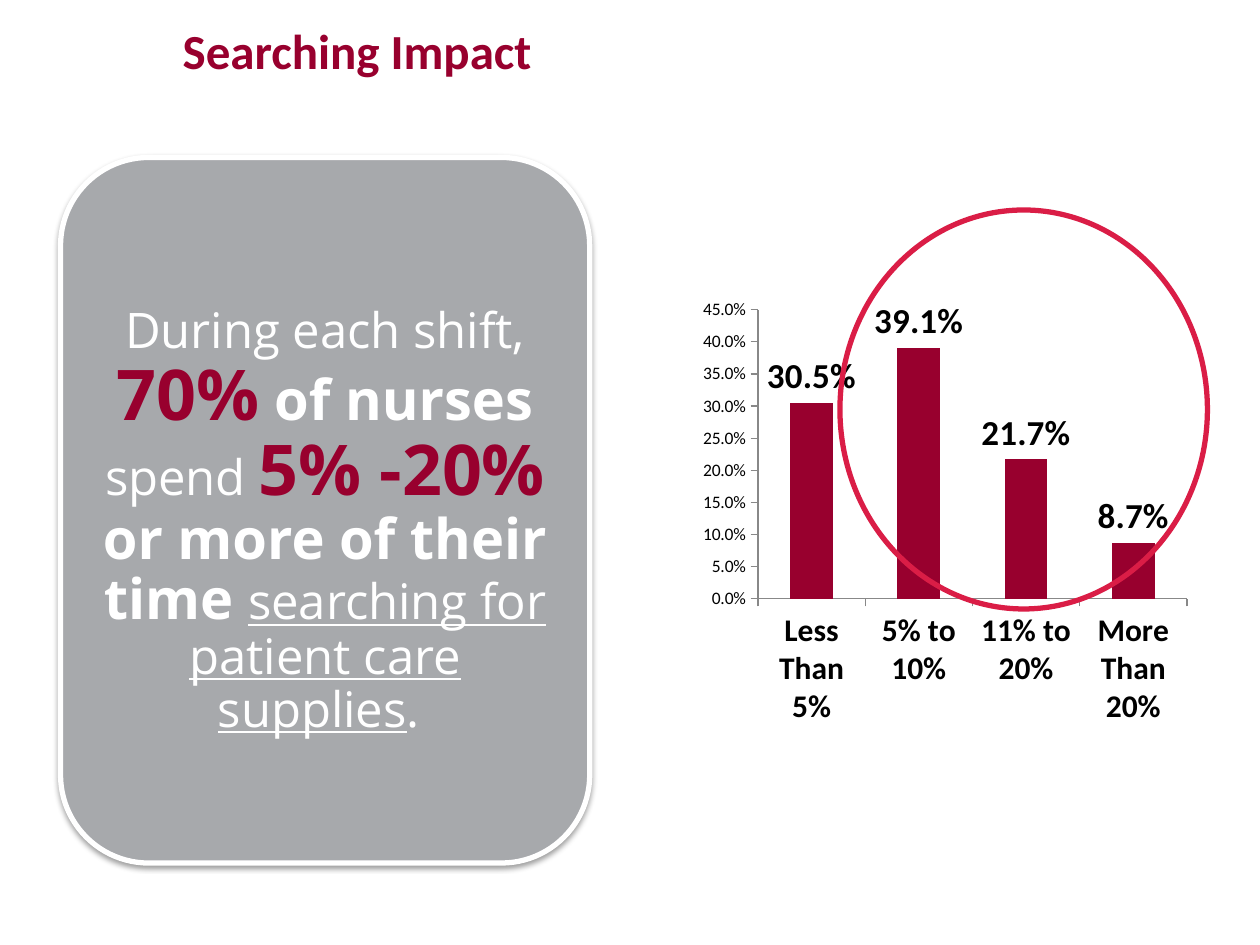
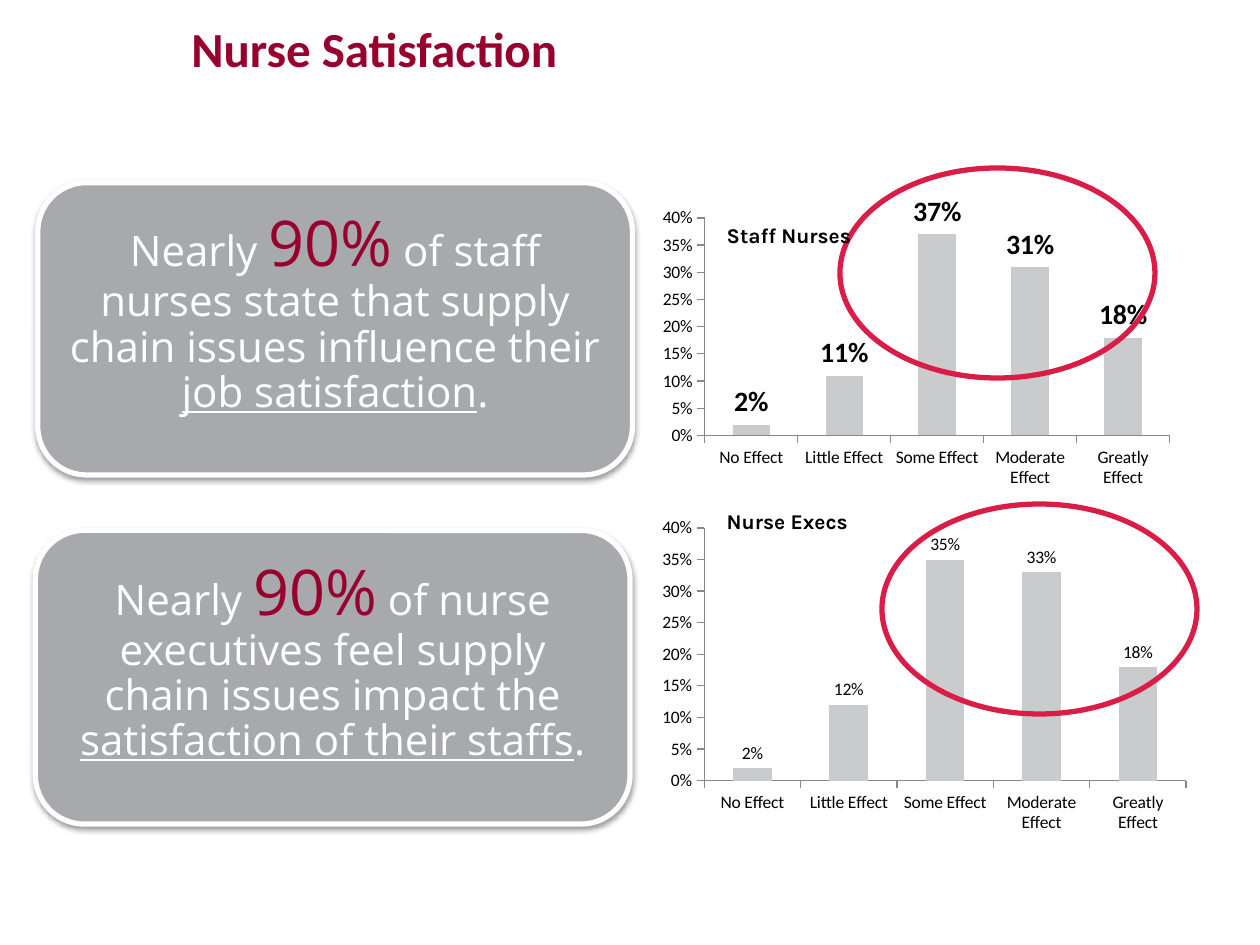
from lxml.etree import SubElement
from pptx import Presentation
from pptx.chart.data import CategoryChartData
from pptx.dml.color import RGBColor
from pptx.enum.chart import XL_CHART_TYPE, XL_LABEL_POSITION, XL_TICK_MARK
from pptx.enum.shapes import MSO_SHAPE
from pptx.enum.text import MSO_ANCHOR, MSO_AUTO_SIZE, PP_ALIGN
from pptx.oxml import parse_xml
from pptx.oxml.ns import nsdecls, qn
from pptx.util import Pt

COLORS = {
    "crimson": "98002E",
    "ring": "DA1D46",
    "card": "A7A9AC",
    "bar": "CACBCD",
    "axis": "888888",
    "white": "FFFFFF",
    "black": "000000",
}
HEADING_FONT, CARD_FONT, CAPTION_FONT = "Calibri", "Open Sans", "Karla"
EFFECTS = ["No Effect", "Little Effect", "Some Effect", "Moderate Effect", "Greatly Effect"]
SHADOW = (
    f'<a:outerShdw {nsdecls("a")} blurRad="{Pt(3.1)}" dist="{Pt(1.6)}" dir="5400000" '
    'rotWithShape="0"><a:srgbClr val="000000"><a:alpha val="38000"/></a:srgbClr></a:outerShdw>'
)

SLIDES = [
    {
        "title": ("Searching Impact", 97.2, 7.9),
        "charts": [
            {
                "frame": (396, 166.3, 288, 253.4),
                "categories": ["Less Than 5%", "5% to 10%", "11% to 20%", "More Than 20%"],
                "values": [0.305, 0.391, 0.217, 0.087],
                "format": "0.0%", "maximum": 0.45, "color": "crimson",
                "category_font": (18, True), "label_font": (20, True),
            },
        ],
        "rings": [(480, 120, 210, 228)],
        "captions": None,
        "cards": [
            {
                "frame": (34.6, 90, 302.4, 403.2),
                "bottom_inset": 8,
                "runs": [
                    ("During each shift, ", 28, "white", ""),
                    ("70%", 40, "crimson", "b"),
                    (" of nurses", 32, "white", "b"),
                    (" spend ", 28, "white", ""),
                    ("5% -20% ", 40, "crimson", "b"),
                    ("or more of their time ", 32, "white", "b"),
                    ("searching for patient care supplies", 28, "white", "u"),
                    (". ", 28, "white", ""),
                ],
            },
        ],
    },
    {
        "title": ("Nurse Satisfaction", 102.2, 7.2),
        "charts": [
            {
                "frame": (372.2, 104.4, 305.3, 182.9),
                "categories": EFFECTS,
                "values": [0.02, 0.11, 0.37, 0.31, 0.18],
                "format": "0%", "maximum": 0.4, "color": "bar",
                "category_font": (10, False), "label_font": (16, True),
                "plot": {"x": 0.1, "y": 0.11, "w": 0.87, "h": 0.68},
            },
            {
                "frame": (372.2, 292.3, 311.8, 187.2),
                "categories": EFFECTS,
                "values": [0.02, 0.12, 0.35, 0.33, 0.18],
                "format": "0%", "maximum": 0.4, "color": "bar",
                "category_font": (10, False), "label_font": (10, False),
            },
        ],
        "rings": [(504, 288, 180, 120), (480, 96, 180, 120)],
        "captions": ["Staff Nurses", "Nurse Execs"],
        "cards": [
            {
                "frame": (21.6, 104.4, 339.8, 167),
                "bottom_inset": 38,
                "runs": [
                    ("Nearly ", 24, "white", ""),
                    ("90%", 36, "crimson", ""),
                    (" of staff nurses state that supply chain issues influence their ",
                     24, "white", ""),
                    ("job satisfaction", 24, "white", "u"),
                    (".", 24, "white", ""),
                ],
            },
            {
                "frame": (20.2, 303.1, 339.8, 167.8),
                "bottom_inset": 38,
                "runs": [
                    ("Nearly ", 24, "white", ""),
                    ("90%", 36, "crimson", ""),
                    (" of nurse executives feel supply chain issues impact the ",
                     24, "white", ""),
                    ("satisfaction of their staffs", 24, "white", "u"),
                    (".", 24, "white", ""),
                ],
            },
        ],
    },
]


def rgb(name):
    return RGBColor.from_string(COLORS[name])


def points(frame):
    return [Pt(length) for length in frame]


def style_font(font, face, size, color, bold=False):
    font.name = face
    font.size = Pt(size)
    font.bold = bold
    font.color.rgb = rgb(color)


def add_title(page, text, left, top):
    title = page.shapes.title
    title.left, title.top, title.width, title.height = points((left, top, 468, 56.2))
    frame = title.text_frame
    frame.text = text
    frame.auto_size = MSO_AUTO_SIZE.NONE
    frame.vertical_anchor = MSO_ANCHOR.TOP
    para = frame.paragraphs[0]
    para.alignment = PP_ALIGN.LEFT
    style_font(para.runs[0].font, HEADING_FONT, 28, "crimson", True)


def set_plot_area(chart, plot):
    area = chart._chartSpace.chart.plotArea
    layout = area.find(qn("c:layout"))
    if layout is None:
        layout = area.makeelement(qn("c:layout"))
        area.insert(0, layout)
    manual = SubElement(layout, qn("c:manualLayout"))
    settings = {"layoutTarget": "inner", "xMode": "edge", "yMode": "edge", **plot}
    for tag, value in settings.items():
        SubElement(manual, qn(f"c:{tag}")).set("val", str(value))


def add_column_chart(page, item):
    data = CategoryChartData(number_format=item["format"])
    data.categories = item["categories"]
    data.add_series("Series 1", item["values"])
    chart = page.shapes.add_chart(
        XL_CHART_TYPE.COLUMN_CLUSTERED, *points(item["frame"]), data).chart
    chart.has_title = False
    chart.has_legend = False
    style_font(chart.font, HEADING_FONT, 10, "black")

    fonts = [item["category_font"], (10, False)]
    for axis, (size, bold) in zip((chart.category_axis, chart.value_axis), fonts):
        axis.has_major_gridlines = False
        axis.major_tick_mark = XL_TICK_MARK.OUTSIDE
        axis.minor_tick_mark = XL_TICK_MARK.NONE
        axis.format.line.color.rgb = rgb("axis")
        axis.format.line.width = Pt(0.75)
        style_font(axis.tick_labels.font, HEADING_FONT, size, "black", bold)
    values = chart.value_axis
    values.minimum_scale = 0
    values.maximum_scale = item["maximum"]
    values.major_unit = 0.05
    values.tick_labels.number_format = item["format"]
    values.tick_labels.number_format_is_linked = False

    plot = chart.plots[0]
    plot.gap_width = 150
    plot.vary_by_categories = False
    bars = plot.series[0]
    bars.format.fill.solid()
    bars.format.fill.fore_color.rgb = rgb(item["color"])
    labels = bars.data_labels
    labels.show_value = True
    labels.position = XL_LABEL_POSITION.OUTSIDE_END
    labels.number_format = item["format"]
    labels.number_format_is_linked = False
    size, bold = item["label_font"]
    style_font(labels.font, HEADING_FONT, size, "black", bold)
    if "plot" in item:
        set_plot_area(chart, item["plot"])


def add_outlined(page, kind, frame, line_color):
    shape = page.shapes.add_shape(kind, *points(frame))
    shape.line.color.rgb = rgb(line_color)
    shape.line.width = Pt(3)
    shape.shadow.inherit = False
    return shape


def add_ring(page, frame):
    add_outlined(page, MSO_SHAPE.OVAL, frame, "ring").fill.background()


def add_captions(page, captions):
    box = page.shapes.add_textbox(*points((408.2, 123.8, 144, 194.4)))
    frame = box.text_frame
    frame.word_wrap = True
    frame.text = "\n".join(captions)
    for index, para in enumerate(frame.paragraphs):
        if index:
            para.space_before = Pt(149)
        style_font(para.runs[0].font, CAPTION_FONT, 12, "black", True)


def add_card(page, item):
    card = add_outlined(page, MSO_SHAPE.ROUNDED_RECTANGLE, item["frame"], "white")
    card.fill.solid()
    card.fill.fore_color.rgb = rgb("card")
    card._element.spPr.find(qn("a:effectLst")).append(parse_xml(SHADOW))
    frame = card.text_frame
    frame.word_wrap = True
    frame.vertical_anchor = MSO_ANCHOR.MIDDLE
    frame.margin_left = frame.margin_right = Pt(7.2)
    frame.margin_top = Pt(21.6)
    frame.margin_bottom = Pt(item["bottom_inset"])
    para = frame.paragraphs[0]
    para.alignment = PP_ALIGN.CENTER
    para.line_spacing = 0.9
    for text, size, color, style in item["runs"]:
        span = para.add_run()
        span.text = text
        style_font(span.font, CARD_FONT, size, color, style == "b")
        span.font.underline = style == "u"


def main():
    deck = Presentation()
    deck.slide_width, deck.slide_height = Pt(720), Pt(540)
    for content in SLIDES:
        page = deck.slides.add_slide(deck.slide_layouts[5])
        add_title(page, *content["title"])
        for item in content["charts"]:
            add_column_chart(page, item)
        for frame in content["rings"]:
            add_ring(page, frame)
        if content["captions"]:
            add_captions(page, content["captions"])
        for item in content["cards"]:
            add_card(page, item)
    deck.save("out.pptx")


if __name__ == "__main__":
    main()
